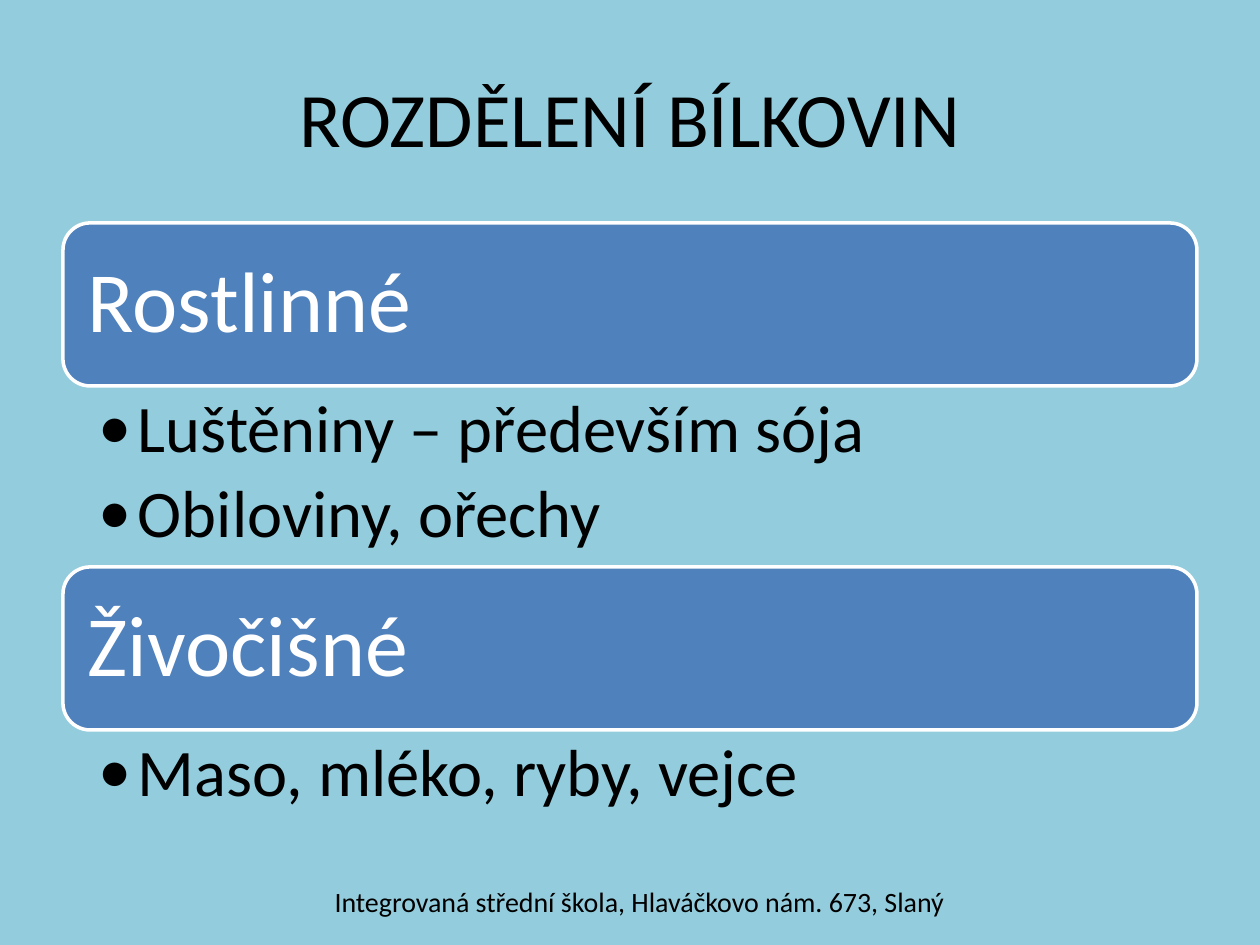
from lxml import etree
from pptx import Presentation
from pptx import util as u
from pptx.dml.color import RGBColor
from pptx.enum import shapes, text
from pptx.oxml import ns

SCALE = u.Inches(1) / 126
SKY = RGBColor(0x93, 0xCD, 0xDD)
BLUE = RGBColor(0x4F, 0x81, 0xBD)
WHITE = RGBColor(255, 255, 255)
BLACK = RGBColor(0, 0, 0)
MID = text.MSO_ANCHOR.MIDDLE
TOP = text.MSO_ANCHOR.TOP
LEFT = text.PP_ALIGN.LEFT
CENTER = text.PP_ALIGN.CENTER

GROUPS = [
    ("Rostlinné", ["Luštěniny – především sója", "Obiloviny, ořechy"], 181),
    ("Živočišné", ["Maso, mléko, ryby, vejce"], 112),
]


def px(num):
    return u.Emu(round(num * SCALE))


def area(box):
    return [px(num) for num in box]


def add_bullet(para, indent):
    props = para._p.get_or_add_pPr()
    props.set("marL", str(px(indent)))
    props.set("indent", str(-px(indent)))
    etree.SubElement(props, ns.qn("a:buFont")).set("typeface", "Calibri")
    etree.SubElement(props, ns.qn("a:buChar")).set("char", "•")


def put_text(shape, lines, size, color=BLACK, align=LEFT, anchor=MID,
             inset=(13, 6, 13, 6), space=1.0, after=0, indent=0):
    frame = shape.text_frame
    frame.word_wrap = True
    frame.vertical_anchor = anchor
    (frame.margin_left, frame.margin_top,
     frame.margin_right, frame.margin_bottom) = area(inset)
    for i, line in enumerate(lines):
        para = frame.paragraphs[0] if i == 0 else frame.add_paragraph()
        para.alignment = align
        para.line_spacing = space
        para.space_after = u.Pt(after)
        if indent:
            add_bullet(para, indent)
        run = para.add_run()
        run.text = line
        run.font.name = "Calibri"
        run.font.size = u.Pt(size)
        run.font.color.rgb = color


def add_label(slide, box, lines, size, **style):
    put_text(slide.shapes.add_textbox(*area(box)), lines, size, **style)


def add_band(slide, box, label):
    band = slide.shapes.add_shape(
        shapes.MSO_SHAPE.ROUNDED_RECTANGLE, *area(box))
    band.shadow.inherit = False
    band.fill.solid()
    band.fill.fore_color.rgb = BLUE
    band.line.color.rgb = WHITE
    band.line.width = u.Pt(2)
    put_text(band, [label], 49, color=WHITE, inset=(17, 17, 17, 17), space=0.9)


def add_groups(slide, box):
    left, top, width, band = box
    for label, items, height in GROUPS:
        add_band(slide, (left, top, width, band), label)
        top += band
        add_label(slide, (left, top, width, height), items, 38, anchor=TOP,
                  inset=(36, 9, 48, 9), space=0.9, after=7.5, indent=39)
        top += height


def main():
    deck = Presentation()
    deck.slide_width, deck.slide_height = px(1260), px(945)
    slide = deck.slides.add_slide(deck.slide_layouts[6])
    slide.background.fill.solid()
    slide.background.fill.fore_color.rgb = SKY
    add_label(slide, (63, 38, 1134, 157), ["ROZDĚLENÍ BÍLKOVIN"], 44,
              align=CENTER)
    add_groups(slide, (63, 223, 1134, 163))
    add_label(slide, (282, 880, 715, 65),
              ["Integrovaná střední škola, Hlaváčkovo nám. 673, Slaný"], 16,
              align=CENTER, inset=(13, 6, 13, 28))
    deck.save("out.pptx")


if __name__ == "__main__":
    main()
